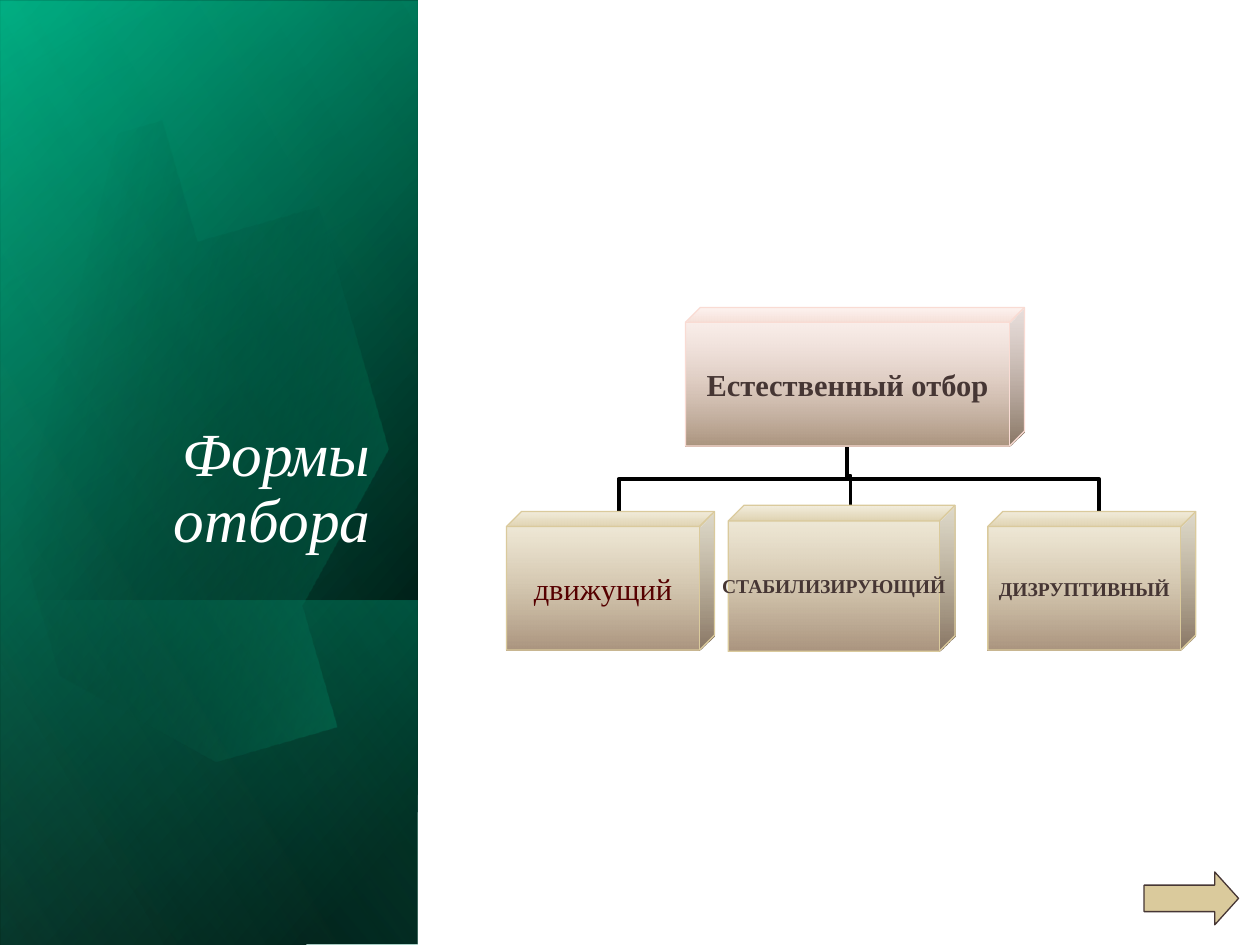
import math
from typing import NamedTuple

from lxml import etree
from pptx import Presentation
from pptx import util as u
from pptx.dml.color import RGBColor
from pptx.enum import shapes, text
from pptx.oxml.ns import qn

COLORS = {
    "black": "000000", "white": "FFFFFF", "green": "009973", "teal": "00CC99",
    "mint": "47FFD1", "sand": "DACA9C", "rose": "F9DBD3", "brown": "AA947E",
    "ink": "463634", "maroon": "560000",
}
FONT = "Times New Roman"


class Stop(NamedTuple):
    position: int
    color: str
    opacity: int = 100


class Panel(NamedTuple):
    left: float
    top: float
    width: float
    height: float
    angle: int
    stops: tuple[Stop, ...]


class Block(NamedTuple):
    label: str
    left: float
    top: float
    width: float
    height: float
    size: float
    tint: str = "sand"
    color: str = "ink"
    bold: bool = True


BASE_PANELS = [
    Panel(-2.09, 2.09, 7.5, 3.31, 50, (Stop(8, "black"), Stop(100, "green"))),
    Panel(-2.09, 2.11, 7.5, 3.31, 30, (Stop(0, "black", 0), Stop(99, "teal", 46))),
    Panel(0.29, 4.48, 2.74, 3.31, 130, (Stop(2, "teal", 29), Stop(100, "black", 30))),
]
SHEEN = Panel(-2.09, 2.09, 7.5, 3.31, 120, (Stop(0, "black", 0), Stop(99, "mint", 11)))

OVAL_CENTER = (1.19, 3.345)
OVAL_TILT = 343.9
OVAL_STOPS = (Stop(29, "black", 0), Stop(100, "teal", 43))
# Each segment continues from the last point: three points curve, one point is straight.
OVAL_START = (0.96, 1.14)
OVAL_SEGMENTS = [
    [(1.71, 1.22), (2.44, 1.92), (2.73, 2.9)],
    [(3.07, 4.12), (2.62, 5.31), (1.71, 5.57)],
    [(1.14, 5.74), (0.53, 5.5), (0.07, 5)],
    [(-0.03, 4.88)], [(-0.25, 1.66)], [(-0.15, 1.54)],
    [(0.02, 1.37), (0.22, 1.25), (0.45, 1.18)],
    [(0.62, 1.13), (0.79, 1.12), OVAL_START],
]

ROOT = Block("Естественный отбор", 5.44, 2.44, 2.69, 1.1, 17.4, tint="rose")
FORMS = [
    Block("движущий", 4.02, 4.06, 1.65, 1.1, 17.4, color="maroon", bold=False),
    Block("СТАБИЛИЗИРУЮЩИЙ", 5.78, 4.01, 1.8, 1.16, 11.2),
    Block("ДИЗРУПТИВНЫЙ", 7.84, 4.06, 1.65, 1.1, 11.2),
]
ROOT_PORT = (6.72, 3.54)
FORM_PORTS = [(4.91, 4.06), (6.75, 4.01), (8.72, 4.06)]


def rgb(name: str) -> RGBColor:
    return RGBColor.from_string(COLORS[name])


def fill_gradient(shape, stops: tuple[Stop, ...], angle: int) -> None:
    """Fill with stops that may be transparent; the angle runs clockwise."""
    shape.shadow.inherit = False
    shape.fill.gradient()
    shape.fill.gradient_angle = 360 - angle
    stop_list = shape.element.spPr.find(qn("a:gradFill")).find(qn("a:gsLst"))
    for old in list(stop_list):
        stop_list.remove(old)
    for stop in stops:
        entry = etree.SubElement(stop_list, qn("a:gs"), pos=str(stop.position * 1000))
        color = etree.SubElement(entry, qn("a:srgbClr"), val=COLORS[stop.color])
        if stop.opacity < 100:
            etree.SubElement(color, qn("a:alpha"), val=str(stop.opacity * 1000))


def add_preset(page, kind, left: float, top: float, width: float, height: float):
    return page.shapes.add_shape(
        kind, u.Inches(left), u.Inches(top), u.Inches(width), u.Inches(height))


def draw_panel(page, panel: Panel) -> None:
    shape = add_preset(page, shapes.MSO_SHAPE.RECTANGLE, *panel[:4])
    shape.rotation = 90
    shape.element.spPr.find(qn("a:xfrm")).set("flipH", "1")
    fill_gradient(shape, panel.stops, panel.angle)
    shape.line.fill.background()


def curve_points(start, segment, steps: int = 16) -> list[tuple[float, float]]:
    points = []
    for step in range(1, steps + 1):
        t = step / steps
        weights = ((1 - t) ** 3, 3 * t * (1 - t) ** 2, 3 * t * t * (1 - t), t ** 3)
        points.append(tuple(
            sum(w * p[axis] for w, p in zip(weights, [start, *segment]))
            for axis in (0, 1)))
    return points


def untilt(point: tuple[float, float]) -> tuple[float, float]:
    """Turn a point back, so that the shape's own rotation puts it in place."""
    turn = math.radians(-OVAL_TILT)
    x, y = point[0] - OVAL_CENTER[0], point[1] - OVAL_CENTER[1]
    return (OVAL_CENTER[0] + x * math.cos(turn) - y * math.sin(turn),
            OVAL_CENTER[1] + x * math.sin(turn) + y * math.cos(turn))


def draw_oval(page) -> None:
    outline = [OVAL_START]
    for segment in OVAL_SEGMENTS:
        outline += curve_points(outline[-1], segment) if len(segment) == 3 else segment
    start, *rest = [untilt(point) for point in outline]
    builder = page.shapes.build_freeform(*start, scale=float(u.Inches(1)))
    builder.add_line_segments(rest, close=True)
    shape = builder.convert_to_shape()
    shape.rotation = OVAL_TILT
    fill_gradient(shape, OVAL_STOPS, 30)
    shape.line.fill.background()


def write(frame, words: str, size: float, color: str, align):
    para = frame.paragraphs[0]
    para.text = words
    para.alignment = align
    para.space_after = u.Pt(6)
    font = para.runs[0].font
    font.name, font.size, font.color.rgb = FONT, u.Pt(size), rgb(color)
    return para


def draw_title(page) -> None:
    box = page.shapes.add_textbox(
        u.Inches(0.48), u.Inches(1.84), u.Inches(2.56), u.Inches(2.62))
    frame = box.text_frame
    frame.word_wrap = True
    frame.vertical_anchor = text.MSO_ANCHOR.BOTTOM
    para = write(frame, "Формы отбора", 35, "white", text.PP_ALIGN.RIGHT)
    para.line_spacing = 0.9
    para.runs[0].font.italic = True


def draw_branch(page, child: tuple[float, float], parent: tuple[float, float]) -> None:
    """Draw an elbow that leaves the child upwards, by turning a sideways one."""
    run, rise = child[0] - parent[0], child[1] - parent[1]
    x, y = (child[0] + parent[0]) / 2, (child[1] + parent[1]) / 2
    branch = page.shapes.add_connector(
        shapes.MSO_CONNECTOR.ELBOW,
        u.Inches(x - rise / 2), u.Inches(y + run / 2),
        u.Inches(x + rise / 2), u.Inches(y - run / 2))
    properties = branch.element.spPr
    properties.find(qn("a:xfrm")).set("rot", str(270 * 60000))
    branch.line.color.rgb = rgb("black")
    branch.line.width = u.Pt(2.25)
    etree.SubElement(properties, qn("a:effectLst"))


def draw_block(page, block: Block) -> None:
    cube = add_preset(page, shapes.MSO_SHAPE.CUBE, *block[1:5])
    cube.adjustments[0] = 0.108
    fill_gradient(cube, (Stop(0, block.tint, 40), Stop(100, "brown")), 90)
    cube.line.color.rgb = rgb(block.tint)
    cube.line.width = u.Pt(0.75)
    frame = cube.text_frame
    frame.word_wrap = False
    frame.vertical_anchor = text.MSO_ANCHOR.MIDDLE
    para = write(frame, block.label, block.size, block.color, text.PP_ALIGN.CENTER)
    para.runs[0].font.bold = block.bold


def draw_next_arrow(page) -> None:
    arrow = add_preset(page, shapes.MSO_SHAPE.RIGHT_ARROW, 9.08, 6.92, 0.75, 0.42)
    arrow.adjustments[1] = 0.45
    arrow.shadow.inherit = False
    arrow.fill.solid()
    arrow.fill.fore_color.rgb = rgb("sand")
    arrow.line.color.rgb = rgb("ink")
    arrow.line.width = u.Pt(0.75)


def main() -> None:
    deck = Presentation()
    deck.slide_width, deck.slide_height = u.Inches(10), u.Inches(7.5)
    page = deck.slides.add_slide(deck.slide_layouts[6])
    for panel in BASE_PANELS:
        draw_panel(page, panel)
    draw_oval(page)
    draw_panel(page, SHEEN)
    draw_title(page)
    draw_next_arrow(page)
    for port in reversed(FORM_PORTS):
        draw_branch(page, port, ROOT_PORT)
    for block in [ROOT, *FORMS]:
        draw_block(page, block)
    deck.save("out.pptx")


if __name__ == "__main__":
    main()
